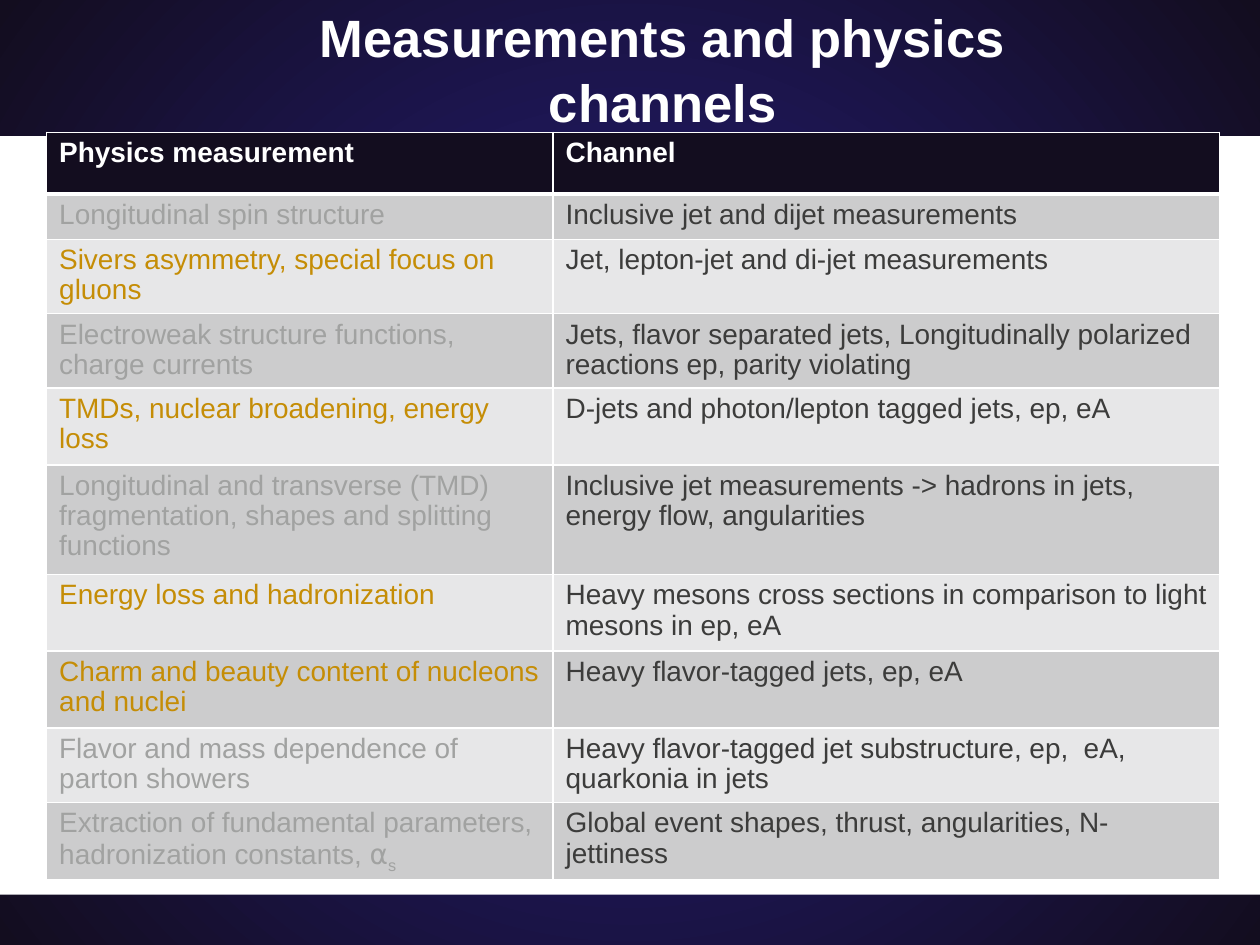
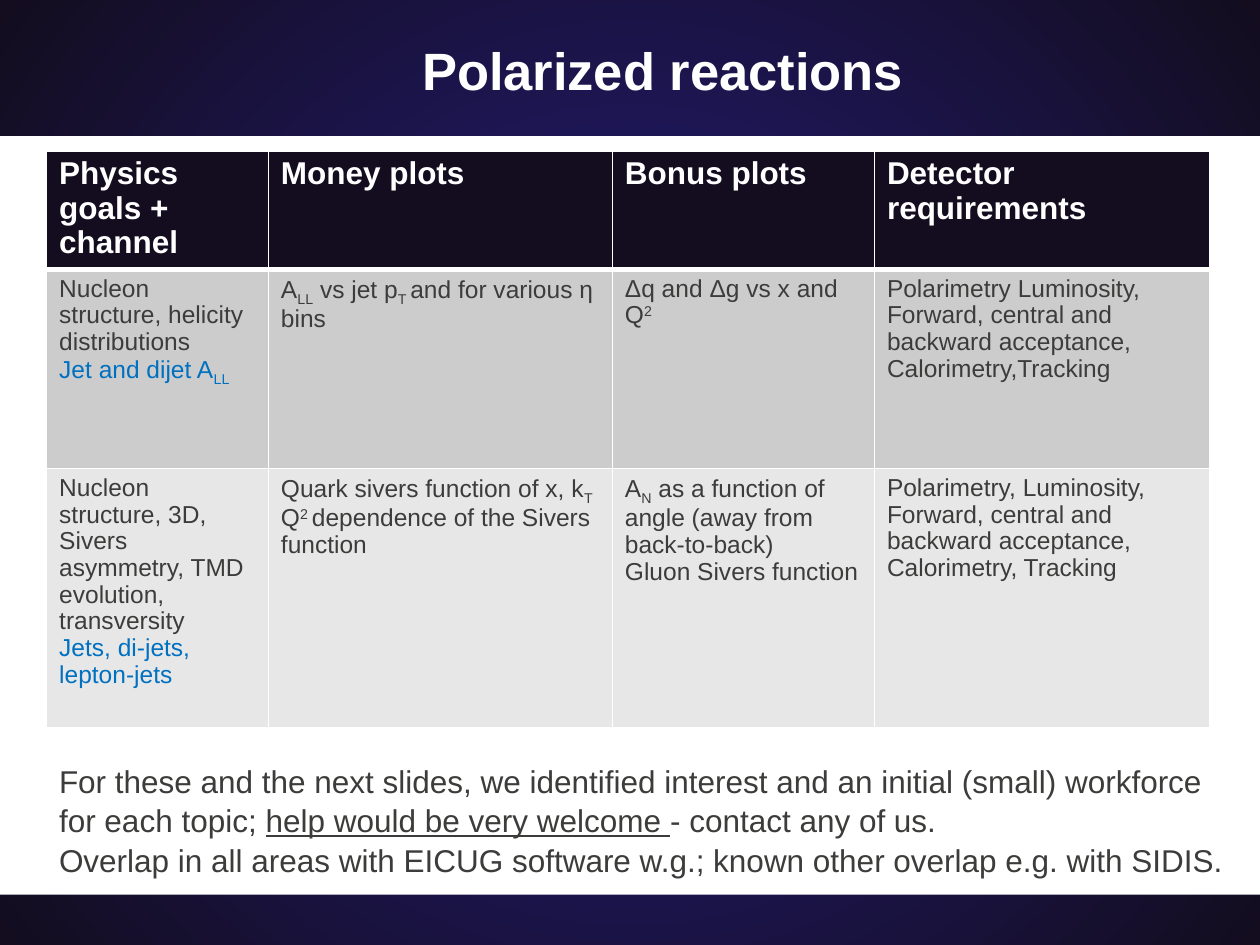
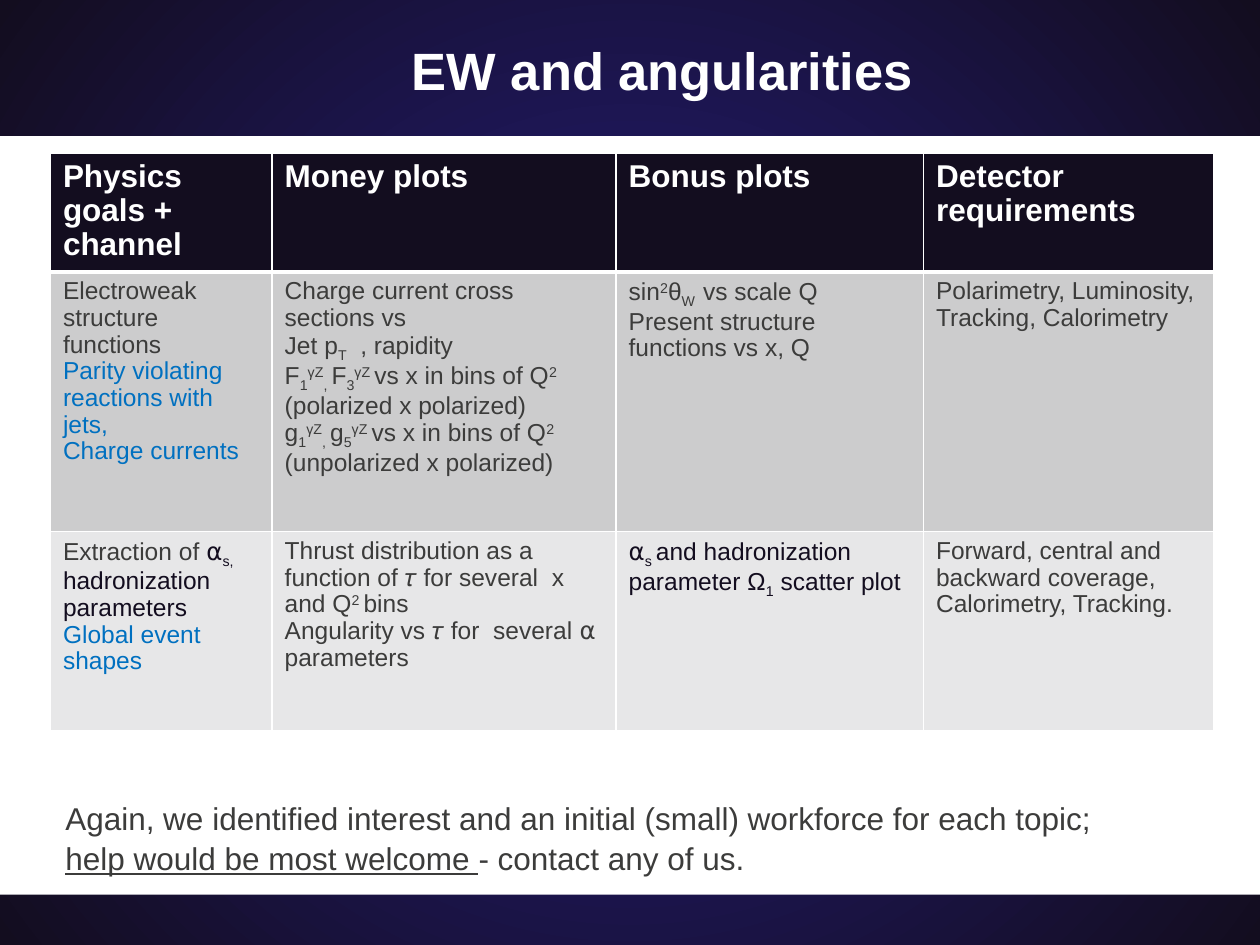
from lxml import etree
from pptx import Presentation
from pptx.dml.color import RGBColor
from pptx.enum.shapes import MSO_SHAPE
from pptx.enum.text import MSO_ANCHOR, MSO_AUTO_SIZE, PP_ALIGN
from pptx.oxml.ns import qn
from pptx.util import Inches, Pt

RECTANGLE = MSO_SHAPE.RECTANGLE
MIDDLE = MSO_ANCHOR.MIDDLE
CENTER = PP_ALIGN.CENTER
NO_FIT, GROW = MSO_AUTO_SIZE.NONE, MSO_AUTO_SIZE.SHAPE_TO_FIT_TEXT

FONT = "Arial"
COLORS = {
    "white": "FFFFFF", "glow": "251D7D", "dark": "130D1F", "text": "3C3C3B",
    "gray": "A1A2A1", "gold": "C58D06", "blue": "0070C0",
    "odd row": "CCCCCD", "even row": "E7E7E8",
}
BASELINES = {"sub": "-25000", "sup": "30000"}
LINE_SPACING = {"title": 1.04, "cell": 0.97, "note": 1.05}

# A paragraph is a string or a list of runs; a run is a string or (text, *styles).
# A style is a colour name, "sub", "sup" or "underline".
PLOT_HEADER = ["Physics goals + channel", "Money plots", "Bonus plots", "Detector requirements"]

MEASUREMENTS = [
    [[[("Longitudinal spin structure", "gray")]],
     "Inclusive jet and dijet measurements"],
    [[[("Sivers asymmetry, special focus on gluons", "gold")]],
     "Jet, lepton-jet and di-jet measurements"],
    [[[("Electroweak structure functions, charge currents", "gray")]],
     "Jets, flavor separated jets, Longitudinally polarized reactions ep, parity violating"],
    [[[("TMDs, nuclear broadening, energy loss", "gold")]],
     "D-jets and photon/lepton tagged jets, ep, eA"],
    [[[("Longitudinal and transverse (TMD) fragmentation, shapes and splitting functions", "gray")]],
     "Inclusive jet measurements -> hadrons in jets, energy flow, angularities"],
    [[[("Energy loss and hadronization", "gold")]],
     "Heavy mesons cross sections in comparison to light mesons in ep, eA"],
    [[[("Charm and beauty content of nucleons and nuclei", "gold")]],
     "Heavy flavor-tagged jets, ep, eA"],
    [[[("Flavor and mass dependence of parton showers", "gray")]],
     "Heavy flavor-tagged jet substructure, ep,  eA, quarkonia in jets"],
    [[[("Extraction of fundamental parameters, hadronization constants, ⍺", "gray"),
       ("s", "gray", "sub")]],
     "Global event shapes, thrust, angularities, N-jettiness"],
]

POLARIZED = [
    [["Nucleon structure, helicity distributions",
      [("Jet and dijet A", "blue"), ("LL", "blue", "sub")]],
     [["A", ("LL", "sub"), " vs jet p", ("T ", "sub"), "and for various η bins"]],
     [["Δq and Δg vs x and Q", ("2", "sup")]],
     "Polarimetry Luminosity, Forward, central and backward acceptance, Calorimetry,Tracking"],
    [["Nucleon structure, 3D, Sivers asymmetry, TMD evolution, transversity",
      [("Jets, di-jets, lepton-jets", "blue")]],
     [["Quark sivers function of x, k", ("T", "sub")],
      ["Q", ("2 ", "sup"), "dependence of the Sivers function"]],
     [["A", ("N", "sub"), " as a function of angle (away from back-to-back)"],
      "Gluon Sivers function"],
     "Polarimetry, Luminosity, Forward, central and backward acceptance, Calorimetry, Tracking"],
]

ELECTROWEAK = [
    [["Electroweak structure functions",
      [("Parity violating reactions with jets,", "blue")],
      [("Charge currents", "blue")]],
     ["Charge current cross sections vs",
      ["Jet p", ("T", "sub"), "  , rapidity"],
      ["F", ("1", "sub"), ("γZ", "sup"), (", ", "sub"), "F", ("3", "sub"), ("γZ ", "sup"),
       "vs x in bins of Q", ("2  ", "sup"), "(polarized x polarized)"],
      ["g", ("1", "sub"), ("γZ", "sup"), (", ", "sub"), "g", ("5", "sub"), ("γZ ", "sup"),
       "vs x in bins of Q", ("2", "sup")],
      "(unpolarized x polarized)"],
     [["sin", ("2", "sup"), "θ", ("W  ", "sub"), "vs scale Q"],
      "Present structure functions vs x, Q"],
     "Polarimetry, Luminosity, Tracking, Calorimetry"],
    [[["Extraction of ", ("⍺", "dark"), ("s, ", "dark", "sub"),
       ("hadronization parameters", "dark")],
      [("Global event shapes", "blue")]],
     [["Thrust distribution as a function of 𝜏 for several  x and Q", ("2 ", "sup"), "bins"],
      "Angularity vs 𝜏 for  several ⍺ parameters"],
     [[("⍺", "dark"), ("s ", "dark", "sub"), ("and hadronization parameter Ω", "dark"),
       ("1", "dark", "sub"), (" scatter plot", "dark")]],
     "Forward, central and backward coverage,  Calorimetry, Tracking."],
]

SLIDES = [
    {"title": "Measurements and physics channels",
     "header": ["Physics measurement", "Channel"], "body": MEASUREMENTS,
     "sizes": (16, 16), "position": (0.37, 1.05), "columns": [4.02, 5.29],
     "rows": [0.49, 0.36, 0.59, 0.59, 0.61, 0.87, 0.61, 0.61, 0.59, 0.61]},
    {"title": "Polarized reactions",
     "header": PLOT_HEADER, "body": POLARIZED,
     "sizes": (18, 14), "position": (0.37, 1.2), "columns": [1.76, 2.73, 2.08, 2.66],
     "rows": [0.94, 1.58, 2.06],
     "note box": (0.37, 5.98, 9.45, 1.01),
     "note": [["For these and the next slides, we identified interest and an initial (small) "
               "workforce for each topic; ",
               ("help would be very welcome ", "underline"), "- contact any of us."],
              "Overlap in all areas with EICUG software w.g.; known other overlap e.g. with SIDIS."]},
    {"title": "EW and angularities",
     "header": PLOT_HEADER, "body": ELECTROWEAK,
     "sizes": (18, 14), "position": (0.4, 1.22), "columns": [1.76, 2.73, 2.44, 2.3],
     "rows": [0.94, 2.06, 1.58],
     "note box": (0.42, 6.28, 9.36, 0.71),
     "note": ["Again, we identified interest and an initial (small) workforce for each topic;",
              [("help would be most welcome ", "underline"), "- contact any of us."]]},
]


def write_text(text_frame, content, size, kind, color="text", bold=False):
    """Fill a text frame with a string or a list of paragraphs."""
    paragraphs = [content] if isinstance(content, str) else content
    for index, runs in enumerate(paragraphs):
        paragraph = text_frame.paragraphs[0] if index == 0 else text_frame.add_paragraph()
        paragraph.line_spacing = LINE_SPACING[kind]
        for item in [runs] if isinstance(runs, str) else runs:
            text, *styles = [item] if isinstance(item, str) else item
            run = paragraph.add_run()
            run.text = text
            run.font.name = FONT
            run.font.size = Pt(size)
            run.font.bold = bold
            run.font.color.rgb = RGBColor.from_string(COLORS[color])
            for style in styles:
                if style in COLORS:
                    run.font.color.rgb = RGBColor.from_string(COLORS[style])
                elif style in BASELINES:
                    run.font._element.set("baseline", BASELINES[style])
                else:
                    run.font.underline = True


def set_borders(cell, widths):
    """Draw white cell borders; widths maps L, R, T, B to points."""
    properties = cell._tc.get_or_add_tcPr()
    for side, width in widths.items():
        line = etree.SubElement(properties, qn(f"a:ln{side}"), w=str(Pt(width)))
        fill = etree.SubElement(line, qn("a:solidFill"))
        etree.SubElement(fill, qn("a:srgbClr"), val=COLORS["white"])


presentation = Presentation()
presentation.slide_width = Inches(10)
presentation.slide_height = Inches(7.5)
master = presentation.slide_master
title_only = presentation.slide_layouts[5]

# Shared background: a radial gradient behind a white content band
background_fill = master.background.fill
background_fill.gradient()
for stop, name in zip(background_fill.gradient_stops, ("glow", "dark")):
    stop.color.rgb = RGBColor.from_string(COLORS[name])
linear = master.element.cSld.find(".//" + qn("a:lin"))
gradient = linear.getparent()
gradient.remove(linear)
radial = etree.SubElement(gradient, qn("a:path"), path="circle")
etree.SubElement(radial, qn("a:fillToRect"), l="50000", t="50000", r="50000", b="50000")

for number, content in enumerate(SLIDES):
    slide = presentation.slides.add_slide(title_only)

    if number == 0:
        band = slide.shapes.add_shape(RECTANGLE, 0, Inches(1.08), Inches(10), Inches(6.02))
        band.shadow.inherit = False
        band.fill.solid()
        band.fill.fore_color.rgb = RGBColor.from_string(COLORS["white"])
        band.line.fill.background()
        master.element.cSld.spTree.insert(2, band.element)

    title = slide.shapes.title
    title.left, title.top, title.width, title.height = map(Inches, (1.89, 0, 6.74, 1.08))
    title.text_frame.vertical_anchor = MIDDLE
    title.text_frame.auto_size = NO_FIT
    title.text_frame.word_wrap = True
    write_text(title.text_frame, content["title"], 30, "title", "white", bold=True)
    title.text_frame.paragraphs[0].alignment = CENTER

    left, top = content["position"]
    columns, rows = content["columns"], content["rows"]
    table = slide.shapes.add_table(len(rows), len(columns), Inches(left), Inches(top),
                                   Inches(sum(columns)), Inches(sum(rows))).table
    for column, width in zip(table.columns, columns):
        column.width = Inches(width)
    for row, height in zip(table.rows, rows):
        row.height = Inches(height)

    header_size, body_size = content["sizes"]
    for row_index, values in enumerate([content["header"]] + content["body"]):
        is_header = row_index == 0
        fill_name = "dark" if is_header else "odd row" if row_index % 2 else "even row"
        widths = {"L": 1, "R": 1, "T": 3 if row_index == 1 else 1, "B": 3 if is_header else 1}
        for column_index, value in enumerate(values):
            cell = table.cell(row_index, column_index)
            set_borders(cell, widths)
            cell.fill.solid()
            cell.fill.fore_color.rgb = RGBColor.from_string(COLORS[fill_name])
            if is_header:
                write_text(cell.text_frame, value, header_size, "cell", "white", bold=True)
            else:
                write_text(cell.text_frame, value, body_size, "cell")

    if "note" in content:
        note = slide.shapes.add_textbox(*map(Inches, content["note box"]))
        note.text_frame.word_wrap = True
        note.text_frame.auto_size = GROW
        write_text(note.text_frame, content["note"], 18, "note")

presentation.save("out.pptx")
